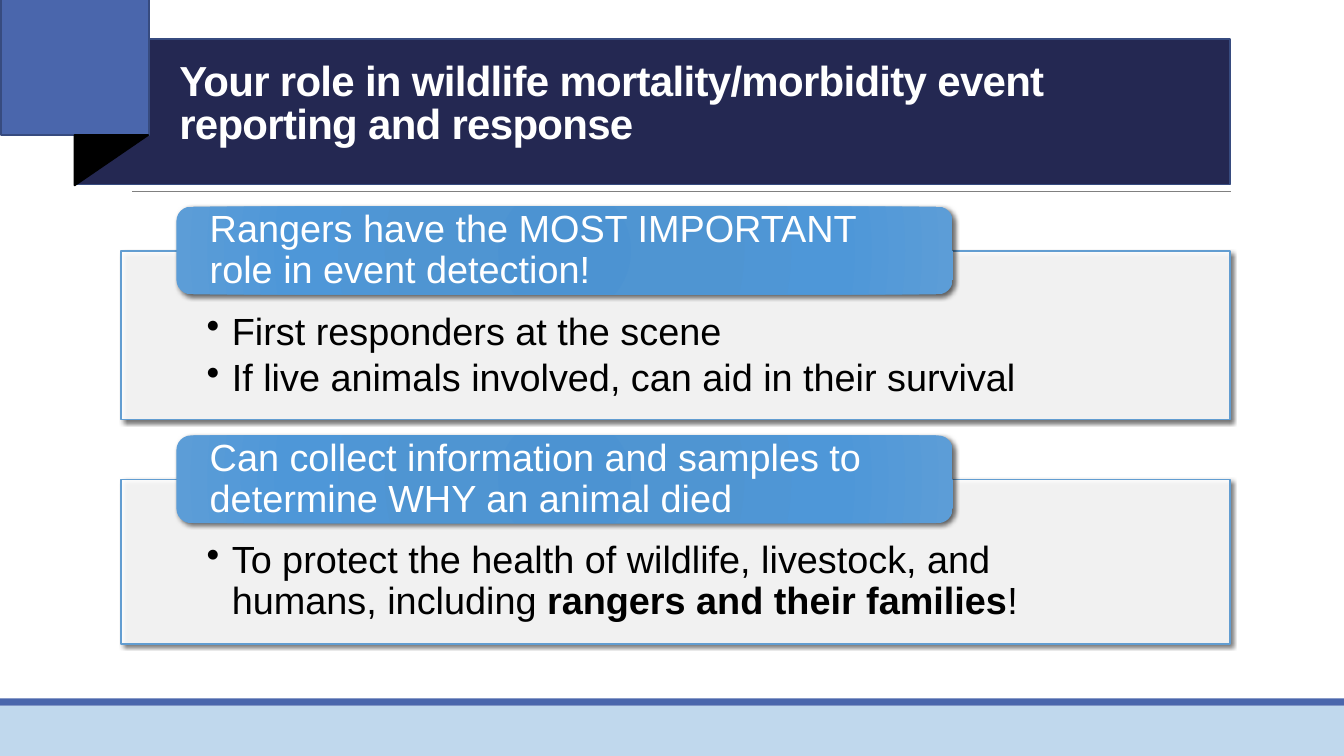
from pptx import Presentation
from pptx.dml.color import RGBColor
from pptx.enum.shapes import MSO_CONNECTOR, MSO_SHAPE as SHAPE
from pptx.enum.text import MSO_ANCHOR as ANCHOR, PP_ALIGN as ALIGN
from pptx.oxml import parse_xml
from pptx.oxml.ns import nsdecls, qn
from pptx.util import Inches, Pt

WHITE = RGBColor(0xFF, 0xFF, 0xFF)
BLACK = RGBColor(0, 0, 0)
GRAY = RGBColor(0x80, 0x80, 0x80)
PALE_BLUE = RGBColor(0xC0, 0xD8, 0xED)
BLUE = RGBColor(0x4A, 0x66, 0xAC)
NAVY = RGBColor(0x24, 0x28, 0x52)
EDGE_BLUE = RGBColor(0x37, 0x4B, 0x7F)
PANEL_EDGE = RGBColor(0x62, 0x9D, 0xD1)
HEADER_STOPS = [
    (0, RGBColor(0x4C, 0x93, 0xD2)),
    (34, RGBColor(0x4F, 0x95, 0xD2)),
    (70, RGBColor(0x4E, 0x97, 0xD8)),
    (100, RGBColor(0x5C, 0x9D, 0xD7)),
]

WIDTH, HEIGHT = 13.33, 7.5
PANEL_LEFT, PANEL_WIDTH = 1.2, 11
HEADER_RISE = 0.44

# Panel top, panel height, header, bullets made of (text, bold) runs
SECTIONS = [
    (2.49, 1.67, "Rangers have the MOST IMPORTANT role in event detection!", [
        [("First responders at the scene", False)],
        [("If live animals involved, can aid in their survival", False)],
    ]),
    (4.76, 1.63, "Can collect information and samples to determine WHY an animal died", [
        [("To protect the health of wildlife, livestock, and humans, including ", False),
         ("rangers and their families", True),
         ("!", False)],
    ]),
]


def set_all(target, values):
    for name, value in values.items():
        setattr(target, name, value)


class SlideBuilder:
    font_name = "Arial"
    body_size = 27

    def __init__(self, presentation):
        self.slide = presentation.slides.add_slide(presentation.slide_layouts[6])

    def shape(self, kind, box, fill=None, edge=None, edge_width=1.25):
        shape = self.slide.shapes.add_shape(kind, *map(Inches, box))
        shape.shadow.inherit = False
        if fill is not None:
            shape.fill.solid()
            shape.fill.fore_color.rgb = fill
        if edge is None:
            shape.line.fill.background()
        else:
            shape.line.color.rgb = edge
            shape.line.width = Pt(edge_width)
        return shape

    def rule(self, left, right, top):
        """Draw a thin horizontal line."""
        line = self.slide.shapes.add_connector(
            MSO_CONNECTOR.STRAIGHT, *map(Inches, (left, top, right, top)))
        line.line.color.rgb = GRAY
        line.line.width = Pt(0.5)
        line._element.spPr.append(parse_xml(f"<a:effectLst {nsdecls('a')}/>"))

    def drop_shadow(self, shape, blur):
        effects = shape._element.spPr.find(qn("a:effectLst"))
        effects.append(parse_xml(
            f'<a:outerShdw {nsdecls("a")} blurRad="{Pt(blur)}" dist="{Pt(2)}" '
            'dir="2700000" algn="tl" rotWithShape="0"><a:srgbClr val="000000">'
            '<a:alpha val="60000"/></a:srgbClr></a:outerShdw>'))

    def text(self, box, paragraphs, size=body_size, color=WHITE, spacing=0.9,
             anchor=ANCHOR.TOP, insets=(0.1, 0.05, 0.1, 0.05), bullet=False, tracking=0):
        """Add a text box whose paragraphs are lists of (text, bold) runs."""
        frame = self.slide.shapes.add_textbox(*map(Inches, box)).text_frame
        sides = ("margin_left", "margin_top", "margin_right", "margin_bottom")
        set_all(frame, {"word_wrap": True, "vertical_anchor": anchor,
                        **dict(zip(sides, map(Inches, insets)))})
        for index, runs in enumerate(paragraphs):
            paragraph = frame.add_paragraph() if index else frame.paragraphs[0]
            set_all(paragraph, {"alignment": ALIGN.LEFT, "line_spacing": spacing})
            if bullet:
                self.bullet(paragraph)
            for words, bold in runs:
                run = paragraph.add_run()
                run.text = words
                set_all(run.font, {"name": self.font_name, "size": Pt(size), "bold": bold})
                run.font.color.rgb = color
                if tracking:
                    run._r.get_or_add_rPr().set("spc", str(int(tracking * 100)))

    def bullet(self, paragraph):
        paragraph.space_after = Pt(4)
        properties = paragraph._p.get_or_add_pPr()
        properties.set("marL", str(Inches(0.25)))
        properties.set("indent", str(Inches(-0.25)))
        properties.append(parse_xml(f'<a:buChar {nsdecls("a")} char="•"/>'))

    def panel(self, top, height, bullets):
        box = (PANEL_LEFT, top, PANEL_WIDTH, height)
        panel = self.shape(SHAPE.RECTANGLE, box, WHITE, PANEL_EDGE, 1)
        fill_color = panel._element.spPr.find(qn("a:solidFill"))[0]
        fill_color.append(parse_xml(f'<a:alpha {nsdecls("a")} val="90000"/>'))
        self.drop_shadow(panel, 3)
        self.text(box, bullets, color=BLACK, insets=(0.85, 0.61, 0.85, 0.21), bullet=True)

    def header(self, top, words):
        header = self.shape(SHAPE.ROUNDED_RECTANGLE, (1.75, top, 7.7, 0.87))
        stops = "".join(f'<a:gs pos="{position * 1000}"><a:srgbClr val="{color}"/></a:gs>'
                        for position, color in HEADER_STOPS)
        header._element.spPr.find(qn("a:prstGeom")).addnext(parse_xml(
            f'<a:gradFill {nsdecls("a")} rotWithShape="1"><a:gsLst>{stops}</a:gsLst>'
            '<a:path path="circle"><a:fillToRect l="100000" t="100000" r="100000" '
            'b="100000"/></a:path></a:gradFill>'))
        self.drop_shadow(header, 3.5)
        self.text((1.79, top + 0.04, 7.61, 0.79), [[(words, False)]],
                  anchor=ANCHOR.MIDDLE, insets=(0.29, 0, 0.29, 0))

    def footer(self):
        self.shape(SHAPE.RECTANGLE, (0, 7, WIDTH, 0.5), PALE_BLUE)
        self.shape(SHAPE.RECTANGLE, (0, 6.93, WIDTH, 0.07), BLUE)

    def title(self, words):
        """Draw the title ribbon with its corner block and fold."""
        self.rule(1.31, 12.21, 1.9)
        self.shape(SHAPE.RECTANGLE, (0.76, 0.39, 11.44, 1.44), NAVY, EDGE_BLUE)
        self.shape(SHAPE.RECTANGLE, (0.01, -0.01, 1.47, 1.35), BLUE, EDGE_BLUE)
        fold = self.shape(SHAPE.RIGHT_TRIANGLE, (0.74, 1.34, 0.73, 0.5), BLACK, BLACK)
        fold._element.spPr.find(qn("a:xfrm")).set("flipV", "1")
        self.text((1.68, 0.51, 10.31, 1.01), [[(words, True)]], size=30,
                  spacing=0.85, anchor=ANCHOR.BOTTOM, tracking=-0.5)


def main():
    presentation = Presentation()
    set_all(presentation, {"slide_width": Inches(WIDTH), "slide_height": Inches(HEIGHT)})
    builder = SlideBuilder(presentation)
    builder.footer()
    builder.title("Your role in wildlife mortality/morbidity event reporting and response")
    for top, height, header, bullets in SECTIONS:
        builder.panel(top, height, bullets)
        builder.header(top - HEADER_RISE, header)
    presentation.save("out.pptx")


if __name__ == "__main__":
    main()
